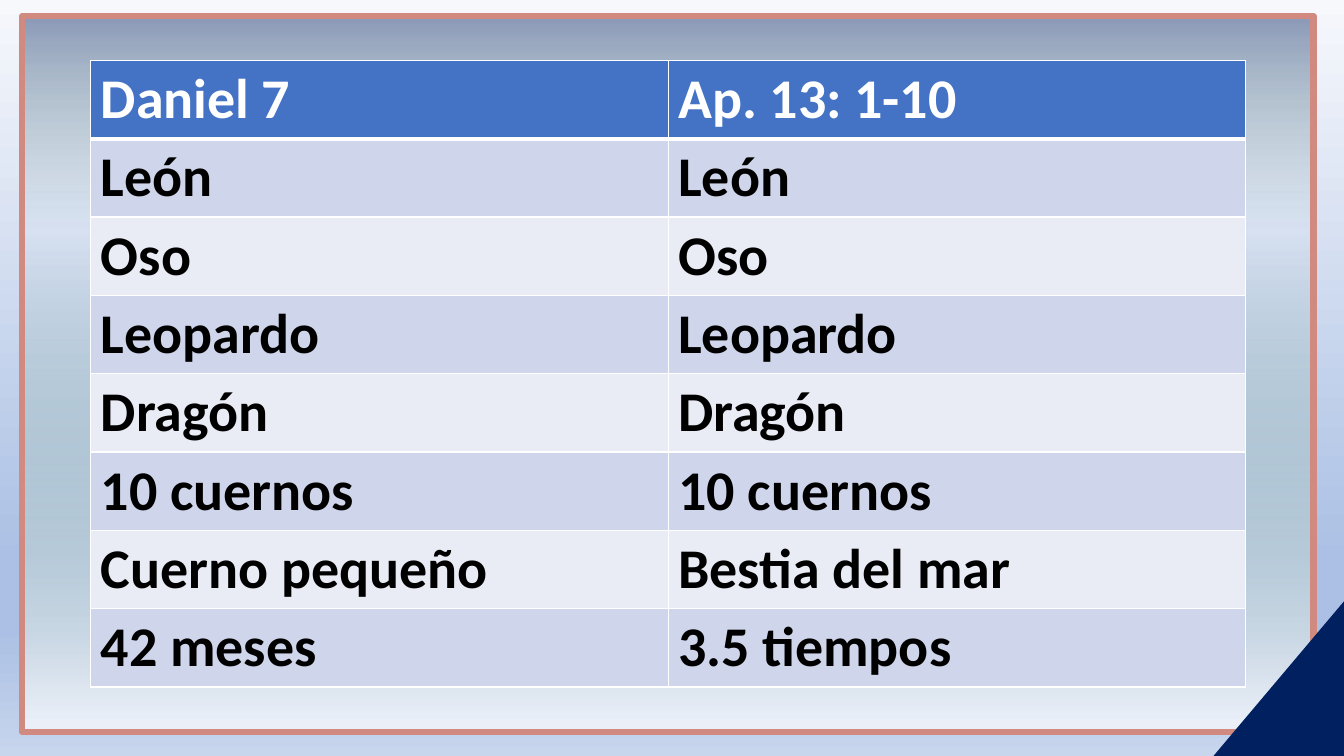
from lxml import etree
from pptx import Presentation
from pptx.dml.color import RGBColor
from pptx.enum.shapes import MSO_SHAPE
from pptx.oxml.ns import qn
from pptx.util import Cm, Pt

ROWS = [
    ("Daniel 7", "Ap. 13: 1-10"),
    ("León", "León"),
    ("Oso", "Oso"),
    ("Leopardo", "Leopardo"),
    ("Dragón", "Dragón"),
    ("10 cuernos", "10 cuernos"),
    ("Cuerno pequeño", "Bestia del mar"),
    ("42 meses", "3.5 tiempos"),
]
WHITE = RGBColor(0xFF, 0xFF, 0xFF)
BLACK = RGBColor(0, 0, 0)
NAVY = RGBColor(0x00, 0x20, 0x60)
GREEN = RGBColor(0x55, 0x88, 0x68)
CORAL = RGBColor(0xD1, 0x8A, 0x7F)
BLUE = RGBColor(0x44, 0x72, 0xC4)
BANDS = [RGBColor(0xE9, 0xEB, 0xF5), RGBColor(0xCF, 0xD5, 0xEA)]
SKY = [
    (0, RGBColor(0xF6, 0xF8, 0xFC), 100),
    (74, RGBColor(0xAB, 0xC0, 0xE4), 100),
    (83, RGBColor(0xAB, 0xC0, 0xE4), 100),
    (100, RGBColor(0xC7, 0xD5, 0xED), 100),
]
GLASS = [(2, WHITE, 66), (70, GREEN, 0), (100, NAVY, 43)]
RECT = MSO_SHAPE.RECTANGLE
CORNER = MSO_SHAPE.RIGHT_TRIANGLE
COL, ROW = 14.55, 1.97


def node(root, tag, **attrs):
    """Add a child element with the given attributes."""
    return etree.SubElement(root, qn(tag), {k: str(v) for k, v in attrs.items()})


def blend(fill, root, stops, angle):
    """Fill with a linear gradient of (percent, colour, opacity) stops."""
    fill.gradient()
    fill.gradient_angle = angle
    group = next(root.iter(qn("a:gsLst")))
    for old in list(group):
        group.remove(old)
    for place, color, alpha in stops:
        stop = node(group, "a:gs", pos=place * 1000)
        tint = node(stop, "a:srgbClr", val=color)
        node(tint, "a:alpha", val=alpha * 1000)


def block(slide, kind, left, top, width, height):
    """Add a preset shape without shadow or line."""
    shape = slide.shapes.add_shape(kind, Cm(left), Cm(top), Cm(width), Cm(height))
    shape.shadow.inherit = False
    shape.line.fill.background()
    return shape


def write(frame, text, size=40, color=BLACK, bold=True, font="Calibri"):
    """Put formatted text in a frame."""
    run = frame.paragraphs[0].add_run()
    run.text = text
    run.font.size = Pt(size)
    run.font.name = font
    run.font.bold = bold
    run.font.color.rgb = color


def edge(cell, **widths):
    """Draw white cell borders with widths in points."""
    props = cell._tc.get_or_add_tcPr()
    for spot, side in enumerate("LRTB"):
        line = node(props, "a:ln" + side, w=Pt(widths.get(side, 1)))
        node(node(line, "a:solidFill"), "a:srgbClr", val=WHITE)
        props.insert(spot, line)


def grid(slide):
    """Build the table of matching signs."""
    size = len(ROWS), len(ROWS[0])
    table = slide.shapes.add_table(
        *size, Cm(2.29), Cm(1.52), Cm(COL * size[1]), Cm(ROW * size[0])
    ).table
    for r, texts in enumerate(ROWS):
        table.rows[r].height = Cm(ROW)
        for c, text in enumerate(texts):
            cell = table.cell(r, c)
            cell.fill.solid()
            cell.fill.fore_color.rgb = BANDS[r % 2] if r else BLUE
            edge(cell, T=3 if r == 1 else 1, B=1 if r else 3)
            write(cell.text_frame, text, color=BLACK if r else WHITE)


def main():
    """Build and save the slide."""
    deck = Presentation()
    deck.slide_width, deck.slide_height = Cm(33.87), Cm(19.05)
    slide = deck.slides.add_slide(deck.slide_layouts[6])
    blend(slide.background.fill, slide.element, SKY, 270)

    frame = block(slide, RECT, 0.56, 0.41, 32.54, 18.03)
    blend(frame.fill, frame.element, GLASS, 90)
    frame.line.color.rgb = CORAL
    frame.line.width = Pt(4.5)

    corner = block(slide, CORNER, 30.28, 15.44, 3.91, 3.3)
    corner.rotation = 270
    corner.fill.solid()
    corner.fill.fore_color.rgb = NAVY

    grid(slide)
    deck.save("out.pptx")


if __name__ == "__main__":
    main()
